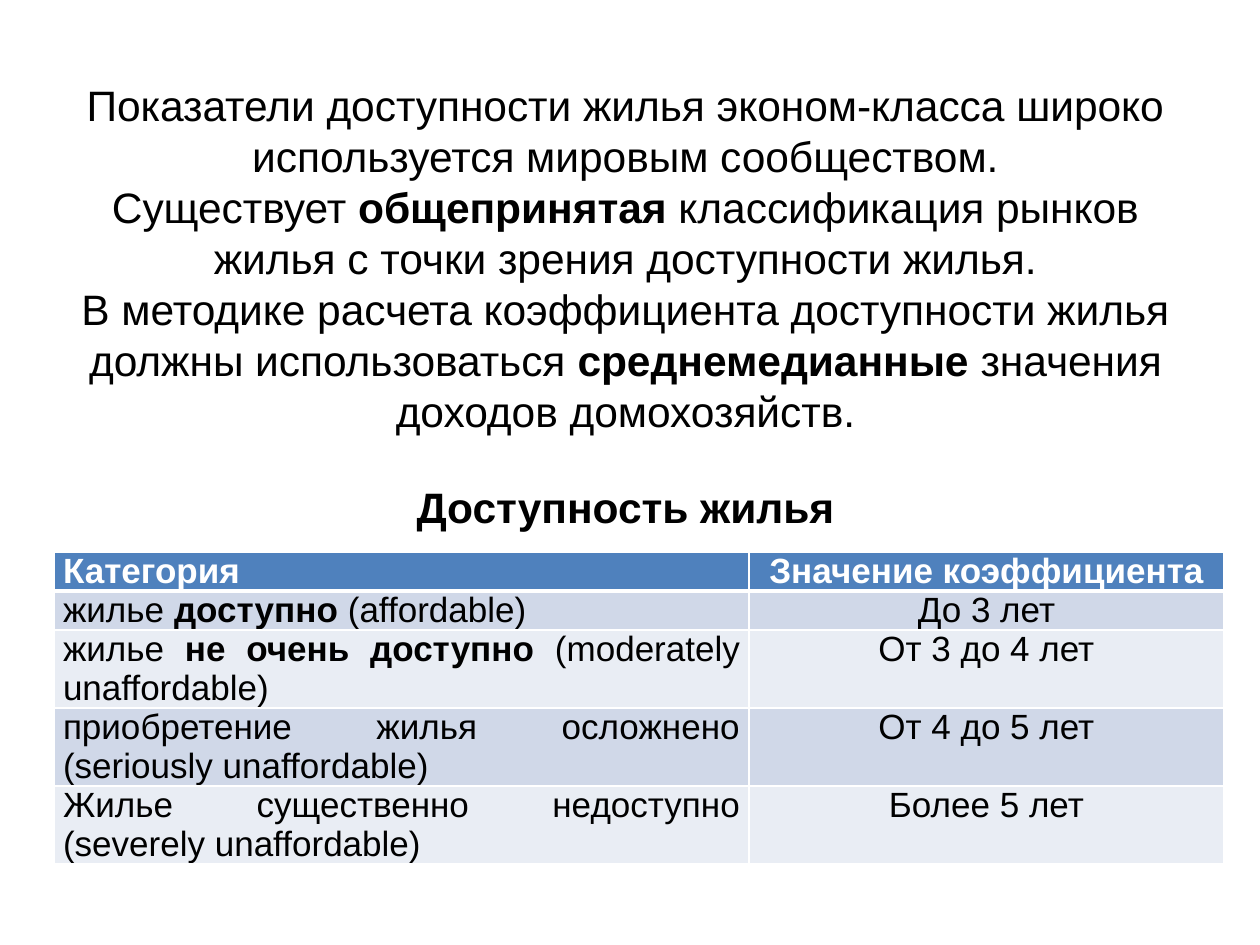
from lxml import etree
from pptx import Presentation, util as u
from pptx.dml.color import RGBColor
from pptx.enum import text
from pptx.oxml.ns import qn

SCALE = 914400 // 126
FONT = "Arial"
BLACK, WHITE, BLUE = "000000", "FFFFFF", "4F81BD"
BANDS = ("D0D8E8", "E9EDF4")

# Each paragraph is a list of (text, bold) runs.
TITLE = [
    [("Показатели доступности жилья эконом-класса широко используется мировым сообществом.", False)],
    [("Существует ", False), ("общепринятая", True),
     (" классификация рынков жилья с точки зрения доступности жилья.", False)],
    [("В методике расчета коэффициента доступности жилья должны использоваться ", False),
     ("среднемедианные", True), (" значения доходов домохозяйств.", False)],
    [("Доступность жилья", True)],
]
ROWS = [
    ([("Категория", True)], [("Значение коэффициента", True)]),
    ([("жилье ", False), ("доступно ", True), ("(affordable)", False)], [("До 3 лет", False)]),
    ([("жилье ", False), ("не очень доступно ", True), ("(moderately unaffordable)", False)],
     [("От 3 до 4 лет", False)]),
    ([("приобретение жилья осложнено (seriously unaffordable)", False)], [("От 4 до 5 лет", False)]),
    ([("Жилье существенно недоступно (severely unaffordable)", False)], [("Более 5 лет", False)]),
]
LINE = 39
ROW_LINES = (1, 1, 2, 2, 2)
COLUMNS = (695, 475)


def px(length):
    return u.Emu(length * SCALE)


def color(value):
    return RGBColor.from_string(value)


def write(paragraph, runs, size, ink, alignment, line_spacing):
    paragraph.alignment = alignment
    paragraph.line_spacing = line_spacing
    for content, bold in runs:
        run = paragraph.add_run()
        run.text = content
        run.font.name = FONT
        run.font.size = u.Pt(size)
        run.font.bold = bold
        run.font.color.rgb = color(ink)


def set_borders(cell, bottom_width):
    properties = cell._tc.get_or_add_tcPr()
    widths = {"a:lnL": 1, "a:lnR": 1, "a:lnT": 1, "a:lnB": bottom_width}
    for position, (tag, width) in enumerate(widths.items()):
        line = etree.Element(qn(tag), w=str(u.Pt(width)))
        fill = etree.SubElement(line, qn("a:solidFill"))
        etree.SubElement(fill, qn("a:srgbClr"), val=WHITE)
        properties.insert(position, line)


def place_title(slide, left, top, width, height):
    title = slide.shapes.title
    title.left, title.top, title.width, title.height = map(px, (left, top, width, height))
    frame = title.text_frame
    frame.word_wrap = True
    frame.auto_size = text.MSO_AUTO_SIZE.NONE
    frame.vertical_anchor = text.MSO_ANCHOR.TOP
    frame.margin_top = frame.margin_bottom = 0
    for index, runs in enumerate(TITLE):
        paragraph = frame.add_paragraph() if index else frame.paragraphs[0]
        write(paragraph, runs, 24.3, BLACK, text.PP_ALIGN.CENTER, px(51))
    paragraph.space_before = px(45)


def place_table(slide, left, top):
    box = map(px, (left, top, sum(COLUMNS), LINE * sum(ROW_LINES)))
    table = slide.shapes.add_table(len(ROWS), len(COLUMNS), *box).table
    for column, width in zip(table.columns, COLUMNS):
        column.width = px(width)
    alignments = (text.PP_ALIGN.JUSTIFY, text.PP_ALIGN.CENTER)
    for row_index, (row, lines) in enumerate(zip(ROWS, ROW_LINES)):
        table.rows[row_index].height = px(LINE * lines)
        header = row_index == 0
        for column_index, runs in enumerate(row):
            cell = table.cell(row_index, column_index)
            cell.margin_left = cell.margin_right = px(9)
            cell.margin_top = cell.margin_bottom = 0
            cell.fill.solid()
            cell.fill.fore_color.rgb = color(BLUE if header else BANDS[(row_index - 1) % 2])
            set_borders(cell, 3 if header else 1)
            write(cell.text_frame.paragraphs[0], runs, 20, WHITE if header else BLACK,
                  alignments[column_index], px(LINE))


def main():
    presentation = Presentation()
    presentation.slide_width, presentation.slide_height = u.Inches(10), u.Inches(7.5)
    slide = presentation.slides.add_slide(presentation.slide_layouts[5])
    place_title(slide, 54, 79, 1143, 814)
    place_table(slide, 54, 552)
    presentation.save("out.pptx")


if __name__ == "__main__":
    main()
